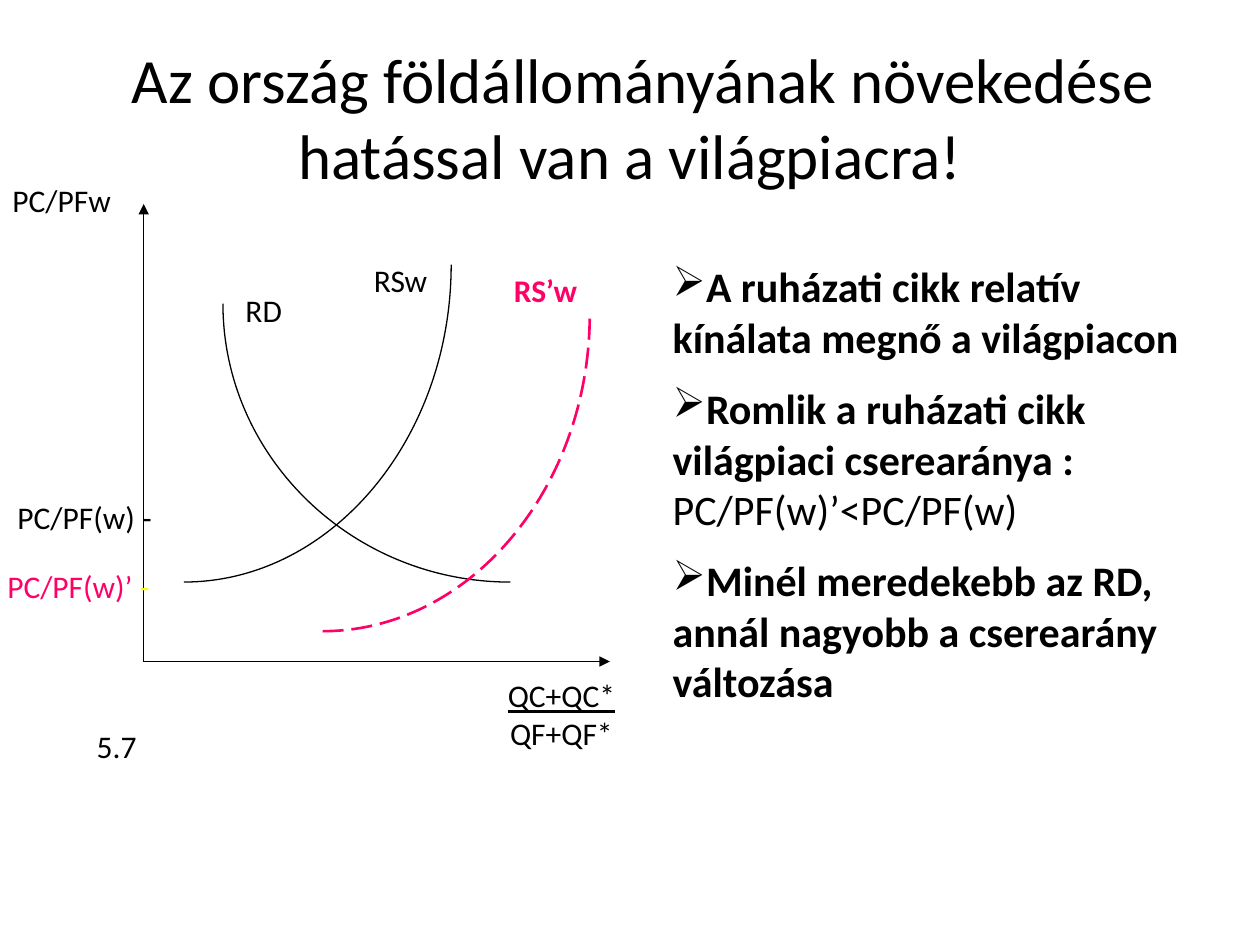
import pptx
import pptx.util
import pptx.dml.color
import pptx.enum.dml
import pptx.enum.shapes
import pptx.enum.text
import pptx.oxml.ns
import lxml.etree

Pt = pptx.util.Pt
ALIGN = pptx.enum.text.PP_ALIGN
ANCHOR = pptx.enum.text.MSO_ANCHOR
DASH = pptx.enum.dml.MSO_LINE
COLORS = {"ink": "000000", "shift": "FF0066", "tick": "FFFF00"}
FONT = "Calibri"
ORIGIN = (82.1, 378)

# Left, top, width, height, runs of (wording, colour, format)
LABELS = [
    (0, 100.1, 82, 28.8, [("PC/PFw", "ink", {})]),
    (133.2, 162.7, 67.7, 28.8, [("RD", "ink", {})]),
    (206.6, 145.4, 62.6, 28.8, [("RSw", "ink", {})]),
    (286.6, 151.2, 62.6, 28.8, [("RS’w", "shift", {"bold": True})]),
    (2.9, 280.8, 113.8, 28.8, [("PC/PF(w) -", "ink", {})]),
    (-2.9, 320.4, 108, 28.8, [("PC/PF(w)’ ", "shift", {}), ("-", "tick", {})]),
    (48.2, 411.8, 79.2, 28.8, [("5.7", "ink", {})]),
]

BOLD = {"bold": True}
FINDINGS = [
    [("A ruházati cikk relatív kínálata megnő a világpiacon", "ink", BOLD)],
    [("Romlik a ruházati cikk világpiaci cserearánya : ", "ink", BOLD),
     ("PC/PF(w)’<PC/PF(w)", "ink", {})],
    [("Minél meredekebb az RD, annál nagyobb a cserearány változása", "ink", BOLD)],
]

# Quarter curves: foot (flat end), top (steep end), colour, width, dash
CURVES = [
    ((291.6, 332.6), (127.4, 173.5), "ink", 0.75, None),
    ((105.1, 332.6), (257.8, 151.2), "ink", 0.75, None),
    ((184.3, 360.7), (337, 179.3), "shift", 1.5, DASH.LONG_DASH),
]
CURVE_PULL = 0.55


def color(name):
    return pptx.dml.color.RGBColor.from_string(COLORS[name])


def set_values(target, values):
    for name, value in values.items():
        setattr(target, name, value)


def add_text(page, frame, paragraphs, size, align=ALIGN.LEFT,
             anchor=ANCHOR.TOP, gap=0, bullet=None, indent=0):
    box = page.shapes.add_textbox(*map(Pt, frame))
    text = box.text_frame
    set_values(text, {"word_wrap": True, "vertical_anchor": anchor})
    for index, runs in enumerate(paragraphs):
        para = text.add_paragraph() if index else text.paragraphs[0]
        properties = para._p.get_or_add_pPr()
        if indent:
            properties.set("indent", str(Pt(indent)))
        if bullet:
            mark = lxml.etree.SubElement(properties, pptx.oxml.ns.qn("a:buChar"))
            mark.set("char", bullet)
        set_values(para, {"alignment": align, "space_before": Pt(gap if index else 0)})
        for wording, tint, extra in runs:
            span = para.add_run()
            span.text = wording
            set_values(span.font, {"name": FONT, "size": Pt(size), **extra})
            span.font.color.rgb = color(tint)


def add_axis(page, end):
    axis = page.shapes.add_connector(
        pptx.enum.shapes.MSO_CONNECTOR.STRAIGHT, *map(Pt, ORIGIN + end))
    axis.line.color.rgb = color("ink")
    axis.line.width = Pt(0.75)
    head = lxml.etree.SubElement(axis.line._get_or_add_ln(), pptx.oxml.ns.qn("a:tailEnd"))
    head.set("type", "triangle")
    lxml.etree.SubElement(axis._element.spPr, pptx.oxml.ns.qn("a:effectLst"))


def add_curve(page, foot, top, tint, width, dash):
    # Control points pull from each end towards the corner they share
    corner = (top[0], foot[1])
    controls = [
        (foot[0] + CURVE_PULL * (corner[0] - foot[0]), foot[1]),
        (top[0], top[1] + CURVE_PULL * (corner[1] - top[1])),
    ]
    builder = page.shapes.build_freeform(Pt(foot[0]), Pt(foot[1]))
    builder.add_line_segments(
        [(Pt(x), Pt(y)) for x, y in controls + [top]], close=False)
    curve = builder.convert_to_shape()
    curve.shadow.inherit = False
    curve.fill.background()
    set_values(curve.line, {"width": Pt(width), "dash_style": dash})
    curve.line.color.rgb = color(tint)
    # Join the three segments into one Bézier segment
    segments = curve._element.xpath(".//a:lnTo")
    outline = segments[0].getparent()
    bezier = lxml.etree.SubElement(outline, pptx.oxml.ns.qn("a:cubicBezTo"))
    for segment in segments:
        bezier.append(segment[0])
        outline.remove(segment)


def main():
    deck = pptx.Presentation()
    set_values(deck, {"slide_width": Pt(720), "slide_height": Pt(540)})
    page = deck.slides.add_slide(deck.slide_layouts[6])

    # Title
    title = "Az ország földállományának növekedése hatással van a világpiacra!"
    add_text(page, (36, 21.6, 648, 90), [[(title, "ink", {})]], 36,
             ALIGN.CENTER, ANCHOR.MIDDLE, indent=15)

    # Diagram
    for end in [(ORIGIN[0], 116.6), (348.5, ORIGIN[1])]:
        add_axis(page, end)
    for curve in CURVES:
        add_curve(page, *curve)
    for *frame, runs in LABELS:
        add_text(page, frame, [runs], 18)
    add_text(page, (247, 383, 147.6, 50.4),
             [[("QC+QC*", "ink", {"underline": True})], [("QF+QF*", "ink", {})]],
             18, ALIGN.CENTER)

    # Findings
    add_text(page, (377.3, 145.6, 306, 296.5), FINDINGS, 24, gap=12, bullet="➢")

    deck.save("out.pptx")


if __name__ == "__main__":
    main()
